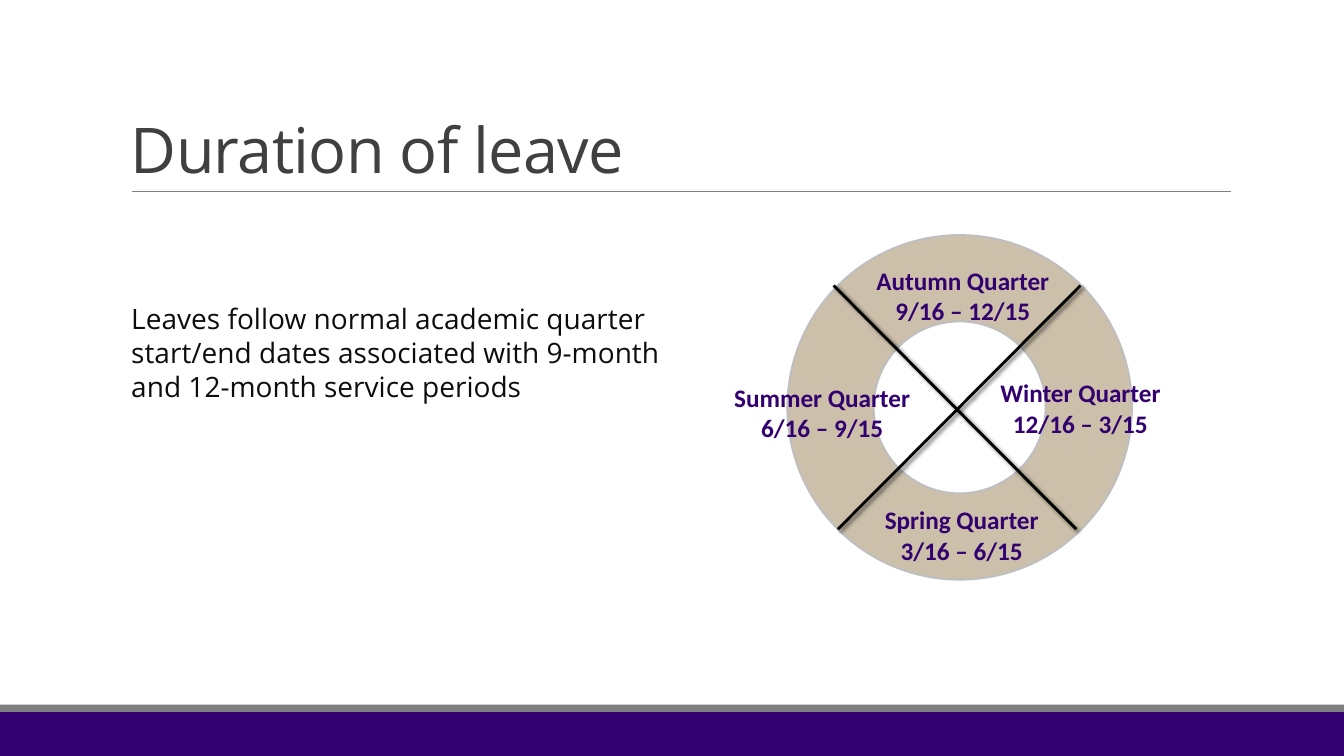
from lxml.etree import SubElement
from pptx import Presentation
from pptx.dml.color import RGBColor
from pptx.enum.shapes import MSO_CONNECTOR, MSO_SHAPE
from pptx.enum.text import MSO_ANCHOR, MSO_AUTO_SIZE, PP_ALIGN
from pptx.oxml import parse_xml
from pptx.oxml.ns import nsdecls, qn
from pptx.util import Pt

PX = 9525  # EMU per pixel, 96 pixels to the inch
PURPLE, GREY, TAN = "33006F", "7F7F7F", "9B8357"


def format_text(frame, font_name, size, color, align, bold=False):
    for paragraph in frame.paragraphs:
        paragraph.alignment = align
        for run in paragraph.runs:
            run.font.name = font_name
            run.font.size = Pt(size)
            run.font.bold = bold
            run.font.color.rgb = RGBColor.from_string(color)


def add_rule(start, end, color, width, effects=""):
    """Draw a straight line whose only effects are the given XML."""
    rule = slide.shapes.add_connector(
        MSO_CONNECTOR.STRAIGHT, *(value * PX for value in start + end))
    rule.line.color.rgb = RGBColor.from_string(color)
    rule.line.width = Pt(width)
    rule._element.spPr.append(parse_xml(
        f'<a:effectLst {nsdecls("a")}>{effects}</a:effectLst>'))


prs = Presentation()
prs.slide_width, prs.slide_height = 1280 * PX, 720 * PX
slide = prs.slides.add_slide(prs.slide_layouts[1])

# Footer bands and the rule under the title
for top, height, color in [(678, 42, PURPLE), (671, 7, GREY)]:
    band = slide.shapes.add_shape(
        MSO_SHAPE.RECTANGLE, 0, top * PX, 1280 * PX, height * PX)
    band.shadow.inherit = False
    band.fill.solid()
    band.fill.fore_color.rgb = RGBColor.from_string(color)
    band.line.fill.background()
add_rule((126, 182), (1172, 182), "808080", 0.5)

# Title and statement
title = slide.shapes.title
title.left, title.top, title.width, title.height = 115 * PX, 30 * PX, 1087 * PX, 152 * PX
title.text_frame.text = "Duration of leave"
title.text_frame.vertical_anchor = MSO_ANCHOR.BOTTOM
title.text_frame.auto_size = MSO_AUTO_SIZE.NONE
format_text(title.text_frame, "Open Sans", 45, "404040", PP_ALIGN.LEFT)
heading = title.text_frame.paragraphs[0]
heading.line_spacing = 0.85
heading.runs[0].font._element.set("spc", "-50")

body = slide.placeholders[1]
body.left, body.top, body.width, body.height = 125 * PX, 282 * PX, 524 * PX, 274 * PX
body.text_frame.text = ("Leaves follow normal academic quarter start/end dates "
                        "associated with 9-month and 12-month service periods")
body.text_frame.margin_left = body.text_frame.margin_right = 0
body.text_frame.vertical_anchor = MSO_ANCHOR.TOP
body.text_frame.auto_size = MSO_AUTO_SIZE.NONE
format_text(body.text_frame, "Open Sans", 20, "0D0D0D", PP_ALIGN.LEFT)
statement = body.text_frame.paragraphs[0]
statement.line_spacing = 1.01
statement.space_before = Pt(12)
statement_props = statement._p.get_or_add_pPr()
statement_props.set("marL", "0")
statement_props.set("indent", "0")
SubElement(statement_props, qn("a:buNone"))

# Year ring
ring = slide.shapes.add_shape(MSO_SHAPE.DONUT, 750 * PX, 224 * PX, 328 * PX, 328 * PX)
ring.adjustments[0] = 0.25
ring.shadow.inherit = False
ring.fill.solid()
ring.fill.fore_color.rgb = RGBColor.from_string(TAN)
ring_color = ring._element.spPr.find(qn("a:solidFill")).find(qn("a:srgbClr"))
SubElement(ring_color, qn("a:alpha"), val="50000")
ring.line.color.rgb = RGBColor.from_string("BFBFBF")
ring.line.width = Pt(1.5)

quarters = [
    ("Winter", "12/16 – 3/15", 917, 355, 224),
    ("Autumn", "9/16 – 12/15", 824, 248, 186),
    ("Spring", "3/16 – 6/15", 833, 476, 166),
    ("Summer", "6/16 – 9/15", 671, 359, 224),
]
for season, dates, left, top, width in quarters:
    label = slide.shapes.add_textbox(left * PX, top * PX, width * PX, 68 * PX)
    label.text_frame.word_wrap = True
    label.text_frame.auto_size = MSO_AUTO_SIZE.SHAPE_TO_FIT_TEXT
    label.text_frame.text = f"{season} Quarter\n{dates}"
    format_text(label.text_frame, "Calibri", 18, PURPLE, PP_ALIGN.CENTER, bold=True)

# Diagonals between the quarters
shadow = ('<a:outerShdw blurRad="38100" dist="25400" dir="2700000">'
          '<a:srgbClr val="000000"><a:alpha val="60000"/></a:srgbClr></a:outerShdw>')
for start, end in [((794, 272), (1025, 504)), ((798, 504), (1029, 272))]:
    add_rule(start, end, "000000", 2, shadow)

prs.save("out.pptx")
